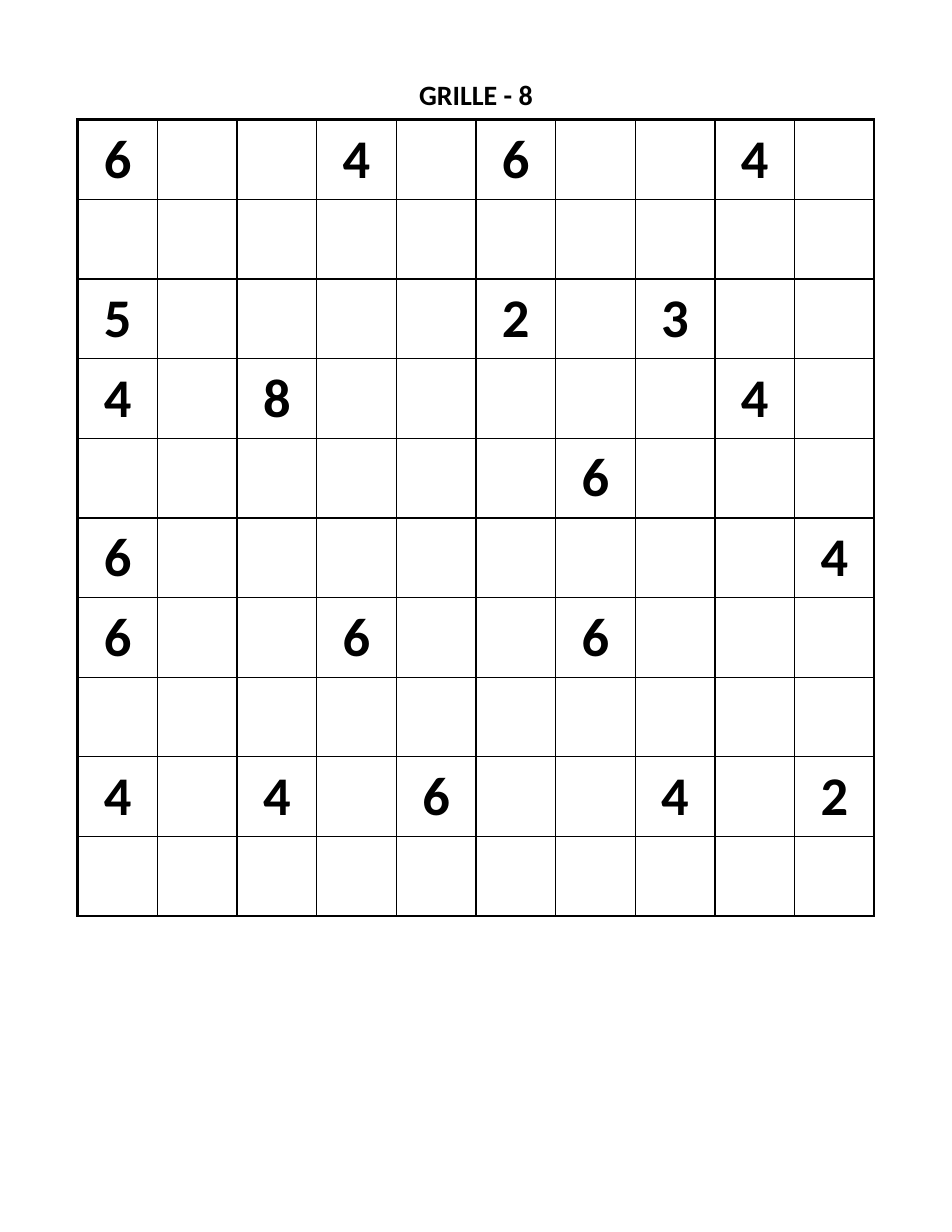
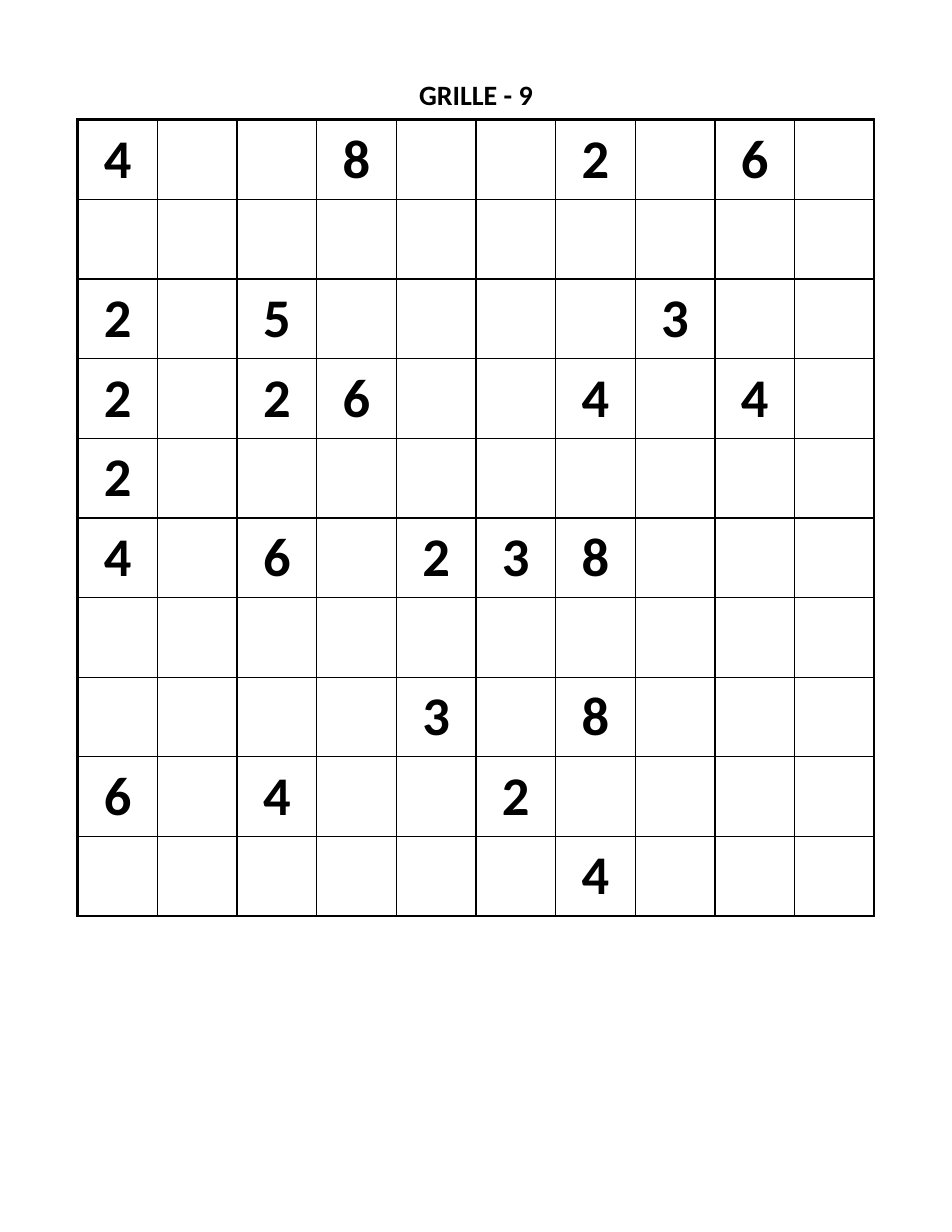
import lxml.etree
import pptx
import pptx.dml.color
import pptx.enum.text
import pptx.oxml.ns
import pptx.util

Pt = pptx.util.Pt
qn = pptx.oxml.ns.qn
FONT = "Calibri"
INK = "000000"
PAPER = "FFFFFF"
THIN, THICK = 1, 2
TITLE = (50, 50, 512, 22)
BOARD = (50, 77, 512, 512)
GRIDS = {
    8: """
        6..4.6..4.
        ..........
        5....2.3..
        4.8.....4.
        ......6...
        6........4
        6..6..6...
        ..........
        4.4.6..4.2
        ..........""",
    9: """
        4..8..2.6.
        ..........
        2.5....3..
        2.26..4.4.
        2.........
        4.6.238...
        ..........
        ....3.8...
        6.4..2....
        ......4...""",
}


def color(text):
    return pptx.dml.color.RGBColor.from_string(text)


def write(frame, text, size):
    para = frame.paragraphs[0]
    para.alignment = pptx.enum.text.PP_ALIGN.CENTER
    run = para.add_run()
    run.text = text
    run.font.name = FONT
    run.font.size = Pt(size)
    run.font.bold = True
    run.font.color.rgb = color(INK)


def clear(item):
    item.margin_left = item.margin_right = 0
    item.margin_top = item.margin_bottom = 0


def title(slide, box, text):
    frame = slide.shapes.add_textbox(*map(Pt, box)).text_frame
    clear(frame)
    frame.word_wrap = True
    frame.auto_size = pptx.enum.text.MSO_AUTO_SIZE.SHAPE_TO_FIT_TEXT
    write(frame, text, 18)


def border(cell, side, width):
    props = cell._tc.get_or_add_tcPr()
    line = lxml.etree.SubElement(props, qn("a:ln" + side), w=str(Pt(width)))
    fill = lxml.etree.SubElement(line, qn("a:solidFill"))
    lxml.etree.SubElement(fill, qn("a:srgbClr"), val=INK)


def board(slide, box, lines):
    count = len(lines)
    left, top, width, height = box
    table = slide.shapes.add_table(count, count, *map(Pt, box)).table
    table.first_row = False
    table.horz_banding = False
    for col in table.columns:
        col.width = Pt(width / count)
    for row in table.rows:
        row.height = Pt(height / count)
    last = count - 1
    for y, line in enumerate(lines):
        for x, mark in enumerate(line):
            cell = table.cell(y, x)
            edges = {"L": x == 0, "R": x == last, "T": y == 0, "B": y == last}
            for side, outer in edges.items():
                border(cell, side, THICK if outer else THIN)
            cell.fill.solid()
            cell.fill.fore_color.rgb = color(PAPER)
            clear(cell)
            cell.vertical_anchor = pptx.enum.text.MSO_ANCHOR.MIDDLE
            if mark != ".":
                write(cell.text_frame, mark, 35)


def page(deck, number, grid):
    slide = deck.slides.add_slide(deck.slide_layouts[6])
    title(slide, TITLE, f"GRILLE - {number}")
    board(slide, BOARD, grid.split())


def main():
    deck = pptx.Presentation()
    deck.slide_width, deck.slide_height = Pt(612), Pt(792)
    for number, grid in GRIDS.items():
        page(deck, number, grid)
    deck.save("out.pptx")


if __name__ == "__main__":
    main()
